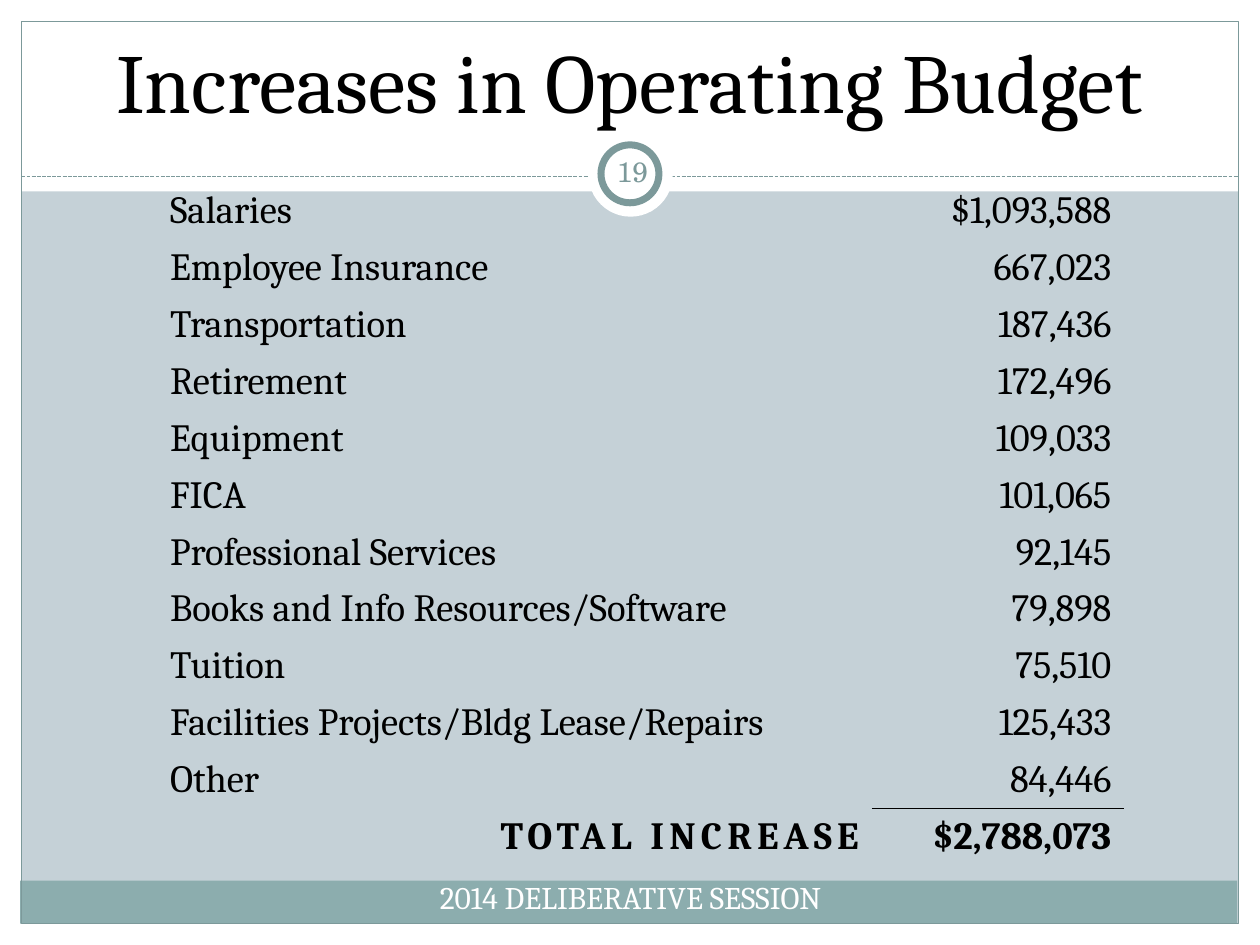
"""Build the operating budget increases slide."""
import pptx
import pptx.util
import pptx.dml.color
import pptx.enum.dml
import pptx.enum.shapes
import pptx.enum.text
import pptx.oxml
import pptx.oxml.ns

Inches = pptx.util.Inches
Pt = pptx.util.Pt
RGBColor = pptx.dml.color.RGBColor
Shape = pptx.enum.shapes.MSO_SHAPE
Align = pptx.enum.text.PP_ALIGN
Anchor = pptx.enum.text.MSO_ANCHOR

WHITE = RGBColor(0xFF, 0xFF, 0xFF)
BLACK = RGBColor(0, 0, 0)
PALE = RGBColor(0xC5, 0xD1, 0xD7)
TEAL = RGBColor(0x8C, 0xAD, 0xAE)
SLATE = RGBColor(0x7C, 0x99, 0x9A)
FACE = "Cambria"
NS = pptx.oxml.ns.nsdecls("a")

ROWS = [
    ("Salaries", "$1,093,588"),
    ("Employee Insurance", "667,023"),
    ("Transportation", "187,436"),
    ("Retirement", "172,496"),
    ("Equipment", "109,033"),
    ("FICA", "101,065"),
    ("Professional Services", "92,145"),
    ("Books and Info Resources/Software", "79,898"),
    ("Tuition", "75,510"),
    ("Facilities Projects/Bldg Lease/Repairs", "125,433"),
    ("Other", "84,446"),
    ("TOTAL INCREASE", "$2,788,073"),
]


def add_form(kind, box, fill=None, line=None, width=0.75):
    form = slide.shapes.add_shape(kind, *map(Inches, box))
    form.shadow.inherit = False
    if fill is None:
        form.fill.background()
    else:
        form.fill.solid()
        form.fill.fore_color.rgb = fill
    if line is None:
        form.line.fill.background()
    else:
        form.line.color.rgb = line
        form.line.width = Pt(width)


def add_text(box, text, size, color, face=FACE, anchor=Anchor.TOP, inset=0.1):
    frame = slide.shapes.add_textbox(*map(Inches, box)).text_frame
    frame.word_wrap = True
    frame.vertical_anchor = anchor
    frame.margin_left = frame.margin_right = Inches(inset)
    frame.text = text
    para = frame.paragraphs[0]
    para.alignment = Align.CENTER
    font = para.runs[0].font
    font.name, font.size = face, Pt(size)
    font.color.rgb = color


deck = pptx.Presentation()
deck.slide_width, deck.slide_height = Inches(10), Inches(7.5)
slide = deck.slides.add_slide(deck.slide_layouts[6])
slide.background.fill.solid()
slide.background.fill.fore_color.rgb = PALE

for box in [(0, 7.33, 10, 0.17), (0, 0, 10, 1.52),
            (0, 0, 0.17, 7.5), (9.83, 0, 0.17, 7.5)]:
    add_form(Shape.RECTANGLE, box, WHITE)
add_form(Shape.RECTANGLE, (0.16, 6.99, 9.66, 0.34), TEAL)
add_form(Shape.RECTANGLE, (0.17, 0.17, 9.66, 7.16), line=SLATE)

rule = slide.shapes.add_connector(
    pptx.enum.shapes.MSO_CONNECTOR.STRAIGHT,
    Inches(0.17), Inches(1.4), Inches(9.83), Inches(1.4))
rule.line.color.rgb = SLATE
rule.line.width = Pt(0.75)
rule.line.dash_style = pptx.enum.dml.MSO_LINE.SQUARE_DOT
dash = rule.line._ln.find(pptx.oxml.ns.qn("a:prstDash"))
dash.set("val", "sysDash")
rule._element.spPr.append(pptx.oxml.parse_xml(f"<a:effectLst {NS}/>"))

add_form(Shape.OVAL, (4.67, 1.05, 0.67, 0.67), WHITE)
add_form(Shape.OVAL, (4.77, 1.15, 0.46, 0.46), WHITE, SLATE, 4)

add_text((0.33, 0.25, 9.33, 0.83), "Increases in Operating Budget", 48, BLACK,
         anchor=Anchor.BOTTOM)

high = Inches(5.42)
table = slide.shapes.add_table(
    len(ROWS), 2, Inches(1.25), Inches(1.45), Inches(7.67), high).table
props = table._tbl.tblPr
props.find(pptx.oxml.ns.qn("a:tableStyleId")).text = (
    "{2D5ABB26-0587-4C30-8999-92F81FD0307C}")
table.first_row = table.horz_banding = False
table.columns[0].width = Inches(5.67)
table.columns[1].width = Inches(2)

last = len(ROWS) - 1
for r, row in enumerate(ROWS):
    table.rows[r].height = high // len(ROWS)
    for c, text in enumerate(row):
        cell = table.cell(r, c)
        cell.margin_top = cell.margin_bottom = Inches(0.01)
        cell.vertical_anchor = Anchor.MIDDLE
        cell.text = text
        para = cell.text_frame.paragraphs[0]
        para.alignment = Align.RIGHT if c or r == last else Align.LEFT
        font = para.runs[0].font
        font.name, font.size = FACE, Pt(22)
        font.bold = r == last
        font.color.rgb = BLACK
        if c and r >= last - 1:
            side = "lnT" if r == last else "lnB"
            cell._tc.get_or_add_tcPr().append(pptx.oxml.parse_xml(
                f'<a:{side} {NS} w="12700"><a:solidFill>'
                f'<a:srgbClr val="{BLACK}"/></a:solidFill></a:{side}>'))
        cell.fill.background()

total = table.cell(last, 0).text_frame.paragraphs[0].runs[0]
total.font._element.set("spc", "300")

add_text((0.17, 6.92, 9.67, 0.4), "2014 DELIBERATIVE SESSION", 18, WHITE)
add_text((4.77, 1.12, 0.5, 0.48), "19", 16, SLATE, "TeX Gyre Schola",
         Anchor.MIDDLE, 0.05)

deck.save("out.pptx")
